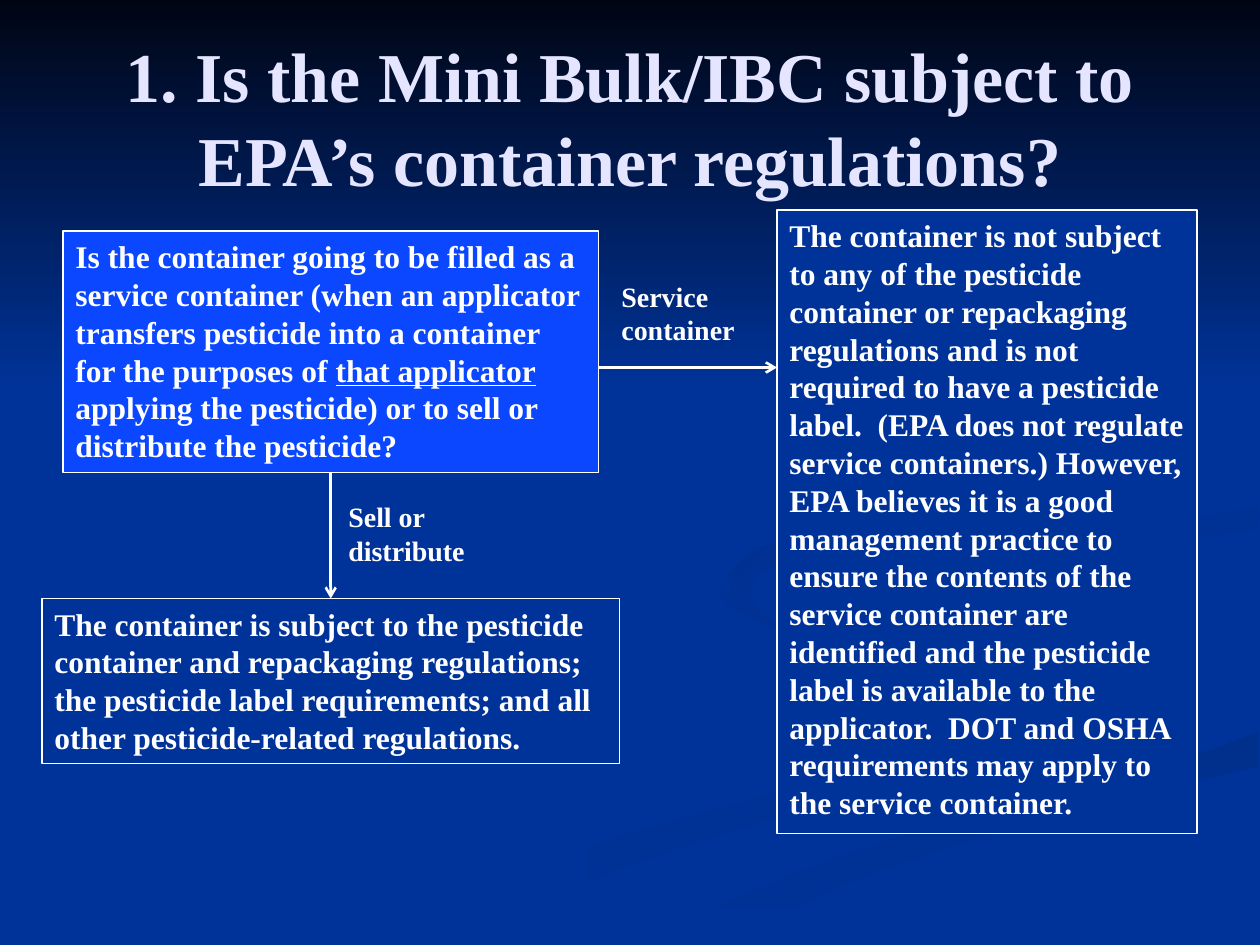
import pptx
import pptx.dml.color
import pptx.enum.shapes
import pptx.enum.text
import pptx.oxml
import pptx.oxml.ns
import pptx.util

FONT = "Times New Roman"
WHITE = "FFFFFF"
NAVY = "003399"
BRIGHT_BLUE = "0A47FF"
LAVENDER = "E5E5FF"

SHARED_EDGE = [
    (719, 418), (693, 428), (650, 439), (598, 453), (550, 466), (501, 482),
    (454, 499), (410, 518), (374, 538), (362, 539),
]
LOWER_SWIRL = [
    (562, 398), (536, 387), (491, 374), (451, 361), (423, 346), (413, 334),
    (414, 330), (410, 337), (415, 346), (433, 356), (471, 369), (514, 382),
    (549, 394), (564, 402), (566, 408), (562, 417), (546, 425), (514, 436),
    (469, 446), (417, 460), (359, 476), (300, 497), (243, 523), (216, 539),
    (260, 539), (310, 514), (359, 495), (406, 479), (449, 466), (503, 452),
    (544, 442), (566, 433), (574, 423), (576, 418), (572, 408), (566, 400),
]
RIGHT_BAND = SHARED_EDGE + [
    (411, 539), (423, 533), (454, 518), (500, 498), (541, 484), (591, 469),
    (650, 454), (719, 438),
]
MAIN_SWIRL = [
    (522, 334), (526, 345), (546, 359), (585, 371), (627, 382), (662, 394),
    (676, 405), (679, 414), (670, 425), (642, 436), (585, 450), (507, 472),
    (446, 492), (379, 521), (343, 539),
] + SHARED_EDGE[::-1] + [
    (719, 387), (678, 379), (624, 366), (588, 354), (566, 341), (562, 333),
    (570, 322), (592, 312), (623, 305), (672, 299), (719, 289), (719, 279),
    (678, 287), (629, 294), (582, 300), (544, 311), (526, 323),
]
INNER_CURL = [
    (562, 331), (566, 341), (580, 351), (595, 357), (582, 348), (580, 340),
    (588, 330), (618, 319), (674, 309), (719, 302), (719, 289), (672, 299),
    (623, 305), (592, 312), (570, 322),
]
UPPER_CURL = [
    (492, 310), (550, 300), (594, 289), (624, 276), (640, 261), (644, 248),
    (638, 228), (622, 210), (591, 188), (549, 168), (580, 183), (609, 201),
    (631, 220), (640, 241), (631, 259), (606, 272), (570, 282), (507, 294),
    (459, 304), (430, 315), (416, 328), (418, 341), (435, 354), (448, 360),
    (433, 349), (427, 338), (433, 328), (449, 320),
]


def color(hex_value):
    return pptx.dml.color.RGBColor.from_string(hex_value)


def fill_solid(fill, hex_value):
    fill.solid()
    fill.fore_color.rgb = color(hex_value)


def fill_gradient(fill, start, end, angle):
    fill.gradient()
    fill.gradient_angle = angle
    for stop, hex_value in zip(fill.gradient_stops, (start, end)):
        stop.color.rgb = color(hex_value)


def add_rectangle(slide, left, top, width, height):
    shape = slide.shapes.add_shape(
        pptx.enum.shapes.MSO_SHAPE.RECTANGLE,
        *map(pptx.util.Pt, (left, top, width, height)))
    shape.shadow.inherit = False
    return shape


def add_swirl(slide, points):
    builder = slide.shapes.build_freeform(*points[0], scale=pptx.util.Pt(1))
    builder.add_line_segments(points[1:], close=True)
    shape = builder.convert_to_shape()
    shape.shadow.inherit = False
    shape.line.fill.background()
    return shape


def add_background(slide):
    fill_solid(slide.background.fill, NAVY)
    fill_gradient(add_swirl(slide, LOWER_SWIRL).fill, NAVY, "003193", 0)
    fill_gradient(add_swirl(slide, RIGHT_BAND).fill, "002F8C", NAVY, 270)
    fill_solid(add_swirl(slide, MAIN_SWIRL).fill, NAVY)
    fill_gradient(add_swirl(slide, INNER_CURL).fill, "003091", NAVY, 315)
    fill_gradient(add_swirl(slide, UPPER_CURL).fill, "002F8E", NAVY, 315)
    sky = add_rectangle(slide, 0, 0, 720, 222)
    sky.line.fill.background()
    fill_gradient(sky.fill, "000514", NAVY, 270)


def write_text(shape, pieces, size, hex_value=WHITE,
               alignment=pptx.enum.text.PP_ALIGN.LEFT,
               anchor=pptx.enum.text.MSO_ANCHOR.TOP):
    frame = shape.text_frame
    frame.word_wrap = True
    frame.vertical_anchor = anchor
    paragraph = frame.paragraphs[0]
    paragraph.alignment = alignment
    for piece in pieces:
        run = paragraph.add_run()
        run.text = piece
        run.font.name = FONT
        run.font.size = pptx.util.Pt(size)
        run.font.bold = True
        run.font.color.rgb = color(hex_value)
    return paragraph


def add_box(slide, left, top, width, height, fill, *pieces):
    shape = add_rectangle(slide, left, top, width, height)
    fill_solid(shape.fill, fill)
    shape.line.color.rgb = color(WHITE)
    shape.line.width = pptx.util.Pt(0.75)
    write_text(shape, pieces, 18)
    return shape


def add_label(slide, left, top, width, height, text, size=16, **style):
    shape = slide.shapes.add_textbox(
        *map(pptx.util.Pt, (left, top, width, height)))
    write_text(shape, [text], size, **style)


def add_arrow(slide, *ends):
    connector = slide.shapes.add_connector(
        pptx.enum.shapes.MSO_CONNECTOR.STRAIGHT, *map(pptx.util.Pt, ends))
    connector.line.color.rgb = color(WHITE)
    connector.line.width = pptx.util.Pt(1.5)
    line = connector.line._get_or_add_ln()
    line.append(pptx.oxml.parse_xml(
        f'<a:tailEnd {pptx.oxml.ns.nsdecls("a")} type="arrow"/>'))
    connector._element.spPr.append(pptx.oxml.parse_xml(
        f'<a:effectLst {pptx.oxml.ns.nsdecls("a")}/>'))
    return connector


def main():
    presentation = pptx.Presentation()
    presentation.slide_width = pptx.util.Pt(720)
    presentation.slide_height = pptx.util.Pt(540)
    slide = presentation.slides.add_slide(presentation.slide_layouts[6])
    add_background(slide)

    question = add_box(
        slide, 36, 132, 306, 138, BRIGHT_BLUE,
        "Is the container going to be filled as a service container (when an "
        "applicator transfers pesticide into a container for the purposes of ",
        "that applicator",
        " applying the pesticide) or to sell or distribute the pesticide?")
    question.text_frame.paragraphs[0].runs[1].font.underline = True
    add_box(
        slide, 444, 120, 240, 356.4, NAVY,
        "The container is not subject to any of the pesticide container or "
        "repackaging regulations and is not required to have a pesticide "
        "label.  (EPA does not regulate service containers.) However, EPA "
        "believes it is a good management practice to ensure the contents of "
        "the service container are identified and the pesticide label is "
        "available to the applicator.  DOT and OSHA requirements may apply to "
        "the service container.")
    regulated = add_box(
        slide, 24, 342, 330, 94.5, NAVY,
        "The container is subject to the pesticide container and repackaging "
        "regulations; the pesticide label requirements; and all other "
        "pesticide-related regulations.")

    add_label(slide, 36, 21.6, 648, 90,
              "1. Is the Mini Bulk/IBC subject to EPA’s container regulations?",
              size=40, hex_value=LAVENDER,
              alignment=pptx.enum.text.PP_ALIGN.CENTER,
              anchor=pptx.enum.text.MSO_ANCHOR.MIDDLE)
    add_label(slide, 348, 156, 90, 46, "Service container")
    add_label(slide, 192, 282, 102, 46, "Sell or distribute")

    add_arrow(slide, 342, 210, 444, 210)
    sell_arrow = add_arrow(slide, 189, 270, 189, 342)
    sell_arrow.begin_connect(question, 2)
    sell_arrow.end_connect(regulated, 0)
    presentation.save("out.pptx")


if __name__ == "__main__":
    main()
